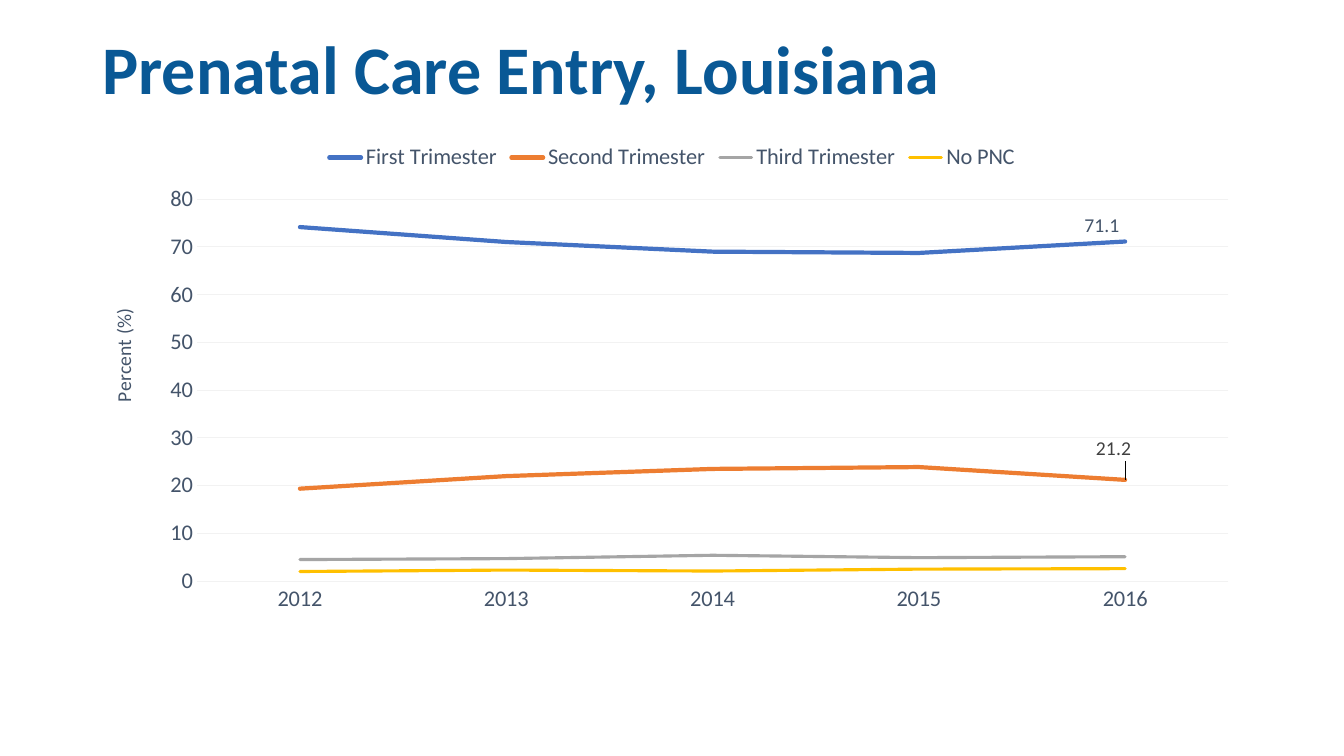
from pptx import Presentation, util as u
from pptx.chart.data import CategoryChartData
from pptx.dml.color import RGBColor
from pptx.enum import chart as ch, text
from pptx.oxml import parse_xml
from pptx.oxml.ns import nsdecls, qn

# Content
TITLE = "Prenatal Care Entry, Louisiana"
AXIS_TITLE = "Percent (%)"
YEARS = ["2012", "2013", "2014", "2015", "2016"]
SERIES = [  # name, values, colour, line width
    ("First Trimester", (74.15, 71.03, 69.01, 68.73, 71.13), "4472C4", 3),
    ("Second Trimester", (19.35, 21.98, 23.49, 23.88, 21.19), "ED7D31", 3),
    ("Third Trimester", (4.5, 4.7, 5.4, 4.9, 5.1), "A5A5A5", 2.25),
    ("No PNC", (2.0, 2.3, 2.1, 2.5, 2.6), "FFC000", 2.25),
]
END_LABELS = [  # series, colour, shift as a share of the chart
    (0, "44546A", {"x": -0.02, "y": 0}),
    (1, "404040", {"x": -0.01, "y": -0.03}),
]
FONT, BLUE, SLATE, GRID = "Calibri", "095895", "44546A", "F2F2F2"
LEFT, WIDTH = u.Cm(2.33), u.Cm(29.21)


def color(value):
    return RGBColor.from_string(value)


def set_font(font, size, value, bold=False):
    font.name, font.size, font.bold = FONT, u.Pt(size), bold
    font.color.rgb = color(value)


def set_layout(parent, index, modes, numbers):
    """Give a chart part a manual layout in shares of the chart."""
    for old in parent.findall(qn("c:layout")):
        parent.remove(old)
    parts = [f'<c:{name} val="{value}"/>' for name, value in {**modes, **numbers}.items()]
    parent.insert(index, parse_xml(
        f'<c:layout {nsdecls("c")}><c:manualLayout>{"".join(parts)}</c:manualLayout></c:layout>'))


presentation = Presentation()
presentation.slide_width, presentation.slide_height = u.Cm(33.87), u.Cm(19.05)
slide = presentation.slides.add_slide(presentation.slide_layouts[6])

# Title
title = slide.shapes.add_textbox(LEFT, u.Cm(0.66), WIDTH, u.Cm(2.31))
frame = title.text_frame
frame.word_wrap = True
frame.vertical_anchor = text.MSO_ANCHOR.MIDDLE
paragraph = frame.paragraphs[0]
paragraph.text = TITLE
paragraph.line_spacing = 0.9
set_font(paragraph.font, 48.6, BLUE, bold=True)

# Chart
data = CategoryChartData()
data.categories = YEARS
for name, values, _, _ in SERIES:
    data.add_series(name, values)
chart = slide.shapes.add_chart(
    ch.XL_CHART_TYPE.LINE, LEFT, u.Cm(3.33), WIDTH, u.Cm(12.34), data).chart
chart.has_title = False
set_font(chart.font, 10, "000000")
chart.has_legend = True
chart.legend.position = ch.XL_LEGEND_POSITION.TOP
chart.legend.include_in_layout = False
set_font(chart.legend.font, 16, SLATE)
EDGES = {"xMode": "edge", "yMode": "edge"}
plot_area = chart.plots[0]._element.getparent()
set_layout(plot_area, 0, {"layoutTarget": "inner", **EDGES},
           {"x": 0.09, "y": 0.137, "w": 0.89, "h": 0.78})

# Axes
for axis in (chart.category_axis, chart.value_axis):
    axis.major_tick_mark = axis.minor_tick_mark = ch.XL_TICK_MARK.NONE
    axis.format.line.fill.background()
    set_font(axis.tick_labels.font, 16, SLATE)
value_axis = chart.value_axis
value_axis.minimum_scale, value_axis.maximum_scale, value_axis.major_unit = 0, 80, 10
value_axis.tick_labels.number_format = "0"
value_axis.tick_labels.number_format_is_linked = False
value_axis.major_gridlines.format.line.color.rgb = color(GRID)
value_axis.major_gridlines.format.line.width = u.Pt(0.75)
axis_title = value_axis.axis_title
axis_title.text_frame.text = AXIS_TITLE
set_font(axis_title.text_frame.paragraphs[0].font, 14, SLATE)
set_layout(axis_title._element, 1, EDGES, {"x": 0.012, "y": 0.353})

# Lines
for series, (_, _, line_color, width) in zip(chart.series, SERIES):
    series.smooth = False
    series.format.line.color.rgb = color(line_color)
    series.format.line.width = u.Pt(width)
    series.format.line._get_or_add_ln().set("cap", "rnd")

# Labels on the last year
for index, label_color, shift in END_LABELS:
    series = chart.series[index]
    series.data_labels.show_value = False
    label = series.points[len(YEARS) - 1].data_label
    set_font(label.font, 14, label_color)
    label.position = ch.XL_LABEL_POSITION.ABOVE
    element = label._get_or_add_dLbl()
    set_layout(element, 1, {}, shift)
    element.insert(2, parse_xml(
        f'<c:numFmt {nsdecls("c")} formatCode="0.0" sourceLinked="0"/>'))

presentation.save("out.pptx")
